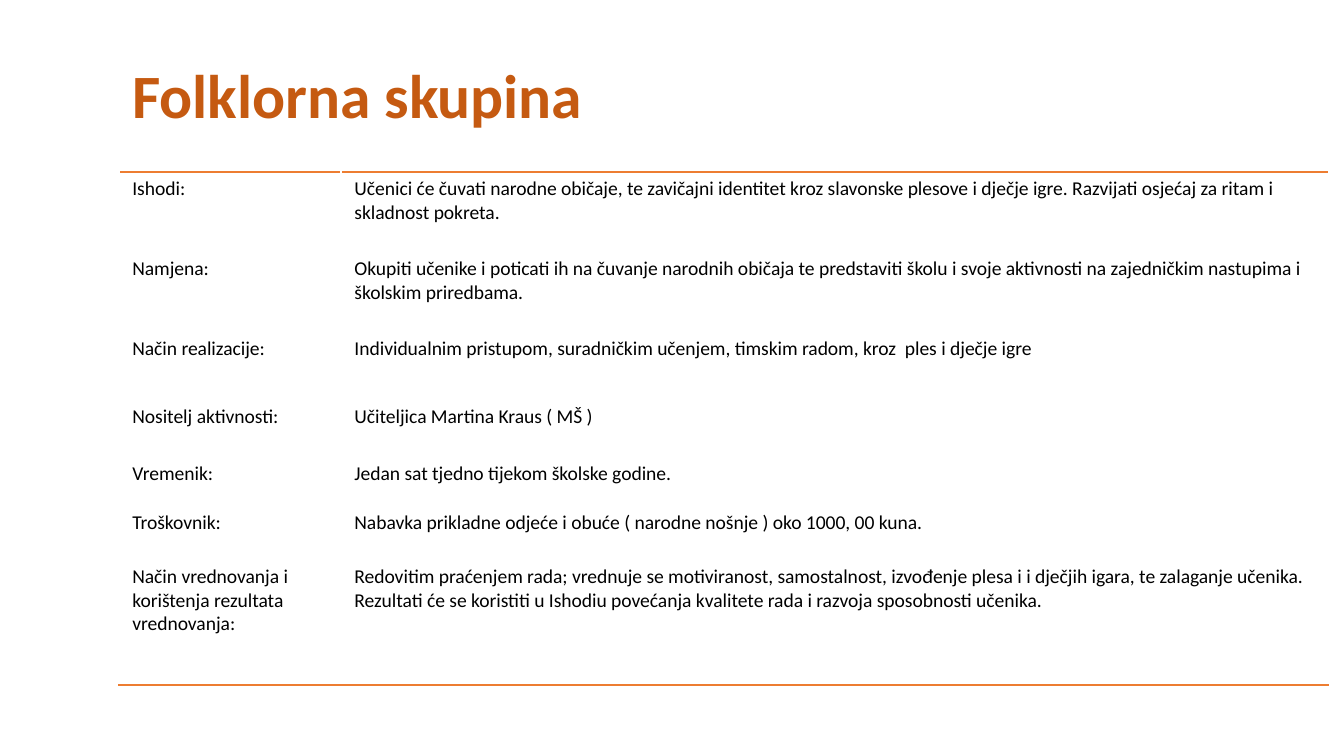
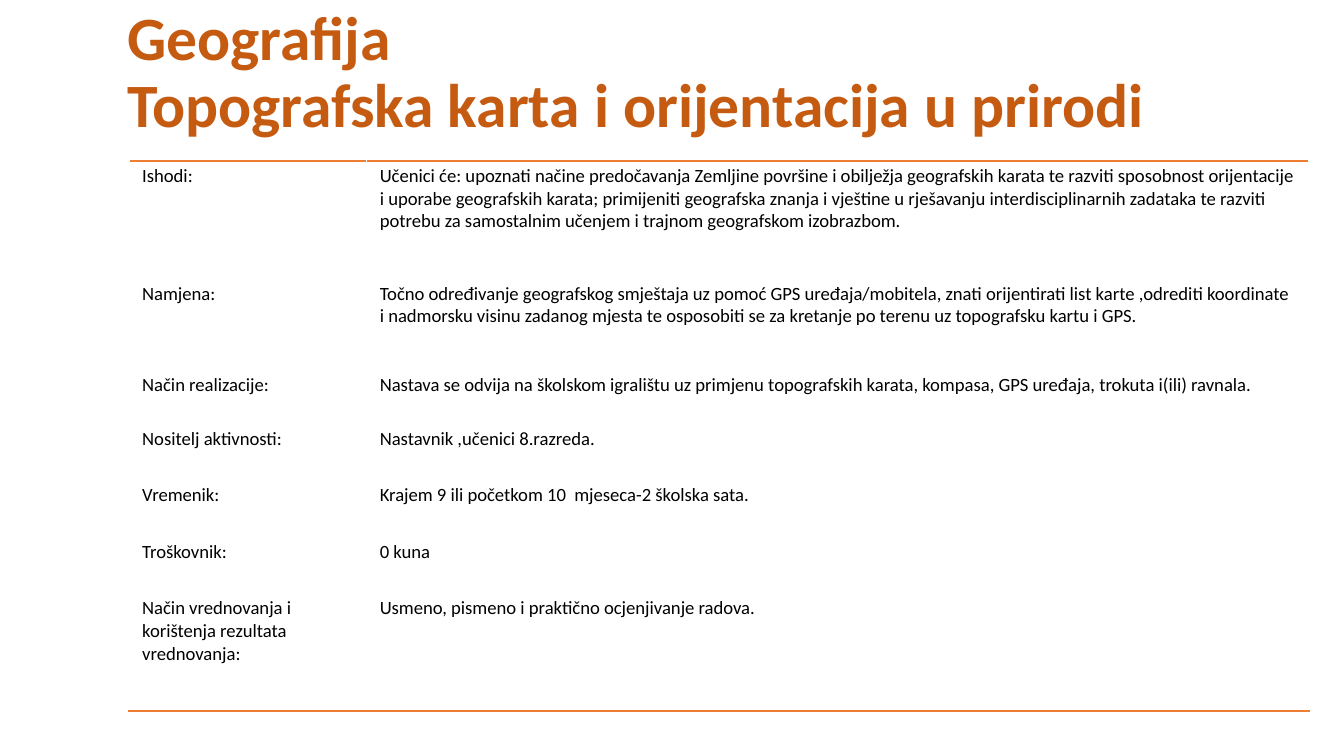
import dataclasses

import pptx
import pptx.dml.color
import pptx.enum.text
import pptx.oxml
import pptx.oxml.ns
import pptx.util

Pt = pptx.util.Pt


@dataclasses.dataclass(frozen=True)
class Theme:
    font: str = "Calibri"
    heading: str = "C55A11"
    rule: str = "ED7D31"
    body: str = "000000"
    heading_size: float = 33
    rule_width: float = 1
    inset: float = 7.2
    heading_width: float = 648
    heading_height: float = 67.7


THEME = Theme()

LABELS = [
    "Ishodi:",
    "Namjena:",
    "Način realizacije:",
    "Nositelj aktivnosti:",
    "Vremenik:",
    "Troškovnik:",
    "Način vrednovanja i korištenja rezultata vrednovanja:",
]

FOLKLORE = [
    "Učenici će čuvati narodne običaje, te zavičajni identitet kroz slavonske plesove i dječje igre. "
    "Razvijati osjećaj za ritam i skladnost pokreta.",
    "Okupiti učenike i poticati ih na čuvanje narodnih običaja te predstaviti školu i svoje aktivnosti "
    "na zajedničkim nastupima i školskim priredbama.",
    "Individualnim pristupom, suradničkim učenjem, timskim radom, kroz  ples i dječje igre",
    "Učiteljica Martina Kraus ( MŠ )",
    "Jedan sat tjedno tijekom školske godine.",
    "Nabavka prikladne odjeće i obuće ( narodne nošnje ) oko 1000, 00 kuna.",
    "Redovitim praćenjem rada; vrednuje se motiviranost, samostalnost, izvođenje plesa i i dječjih igara, "
    "te zalaganje učenika. Rezultati će se koristiti u Ishodiu povećanja kvalitete rada i razvoja "
    "sposobnosti učenika.",
]

GEOGRAPHY = [
    "Učenici će: upoznati načine predočavanja Zemljine površine i obilježja geografskih karata te razviti "
    "sposobnost orijentacije i uporabe geografskih karata; primijeniti geografska znanja i vještine u "
    "rješavanju interdisciplinarnih zadataka te razviti potrebu za samostalnim učenjem i trajnom "
    "geografskom izobrazbom.",
    "Točno određivanje geografskog smještaja uz pomoć GPS uređaja/mobitela, znati orijentirati list karte "
    ",odrediti koordinate i nadmorsku visinu zadanog mjesta te osposobiti se za kretanje po terenu uz "
    "topografsku kartu i GPS.",
    "Nastava se odvija na školskom igralištu uz primjenu topografskih karata, kompasa, GPS uređaja, "
    "trokuta i(ili) ravnala.",
    "Nastavnik ,učenici 8.razreda.",
    "Krajem 9 ili početkom 10  mjeseca-2 školska sata.",
    "0 kuna",
    "Usmeno, pismeno i praktično ocjenjivanje radova.",
]


def write(frame, text, *, size, color, bold=False, spacing=None):
    frame.word_wrap = True
    paragraph = frame.paragraphs[0]
    paragraph.text = text
    paragraph.line_spacing = spacing
    for run in paragraph.runs:
        run.font.name = THEME.font
        run.font.size = Pt(size)
        run.font.bold = bold
        run.font.color.rgb = pptx.dml.color.RGBColor.from_string(color)


def add_heading(slide, text, left, top):
    box = slide.shapes.add_textbox(
        Pt(left), Pt(top), Pt(THEME.heading_width), Pt(THEME.heading_height)
    )
    frame = box.text_frame
    frame.margin_left = frame.margin_right = Pt(THEME.inset)
    frame.margin_top = frame.margin_bottom = Pt(THEME.inset)
    frame.vertical_anchor = pptx.enum.text.MSO_ANCHOR.MIDDLE
    write(frame, text, size=THEME.heading_size, color=THEME.heading, bold=True, spacing=0.9)


def rule_cell(cell, edge):
    border = pptx.oxml.parse_xml(
        f'<a:{edge} {pptx.oxml.ns.nsdecls("a")} w="{Pt(THEME.rule_width)}">'
        f'<a:solidFill><a:srgbClr val="{THEME.rule}"/></a:solidFill></a:{edge}>'
    )
    cell._tc.get_or_add_tcPr().insert(0, border)


def add_plan(slide, answers, *, left, top, widths, heights, size, inset):
    plan = slide.shapes.add_table(
        len(LABELS), 2, Pt(left), Pt(top), Pt(sum(widths)), Pt(sum(heights))
    ).table
    plan.first_row = plan.horz_banding = False
    for column, width in zip(plan.columns, widths):
        column.width = Pt(width)
    for row, height, texts in zip(plan.rows, heights, zip(LABELS, answers)):
        row.height = Pt(height)
        for cell, text in zip(row.cells, texts):
            cell.fill.background()
            cell.margin_left = cell.margin_right = Pt(THEME.inset)
            cell.margin_top = cell.margin_bottom = Pt(inset)
            write(cell.text_frame, text, size=size, color=THEME.body)
    for column in range(2):
        rule_cell(plan.cell(0, column), "lnT")
        rule_cell(plan.cell(len(LABELS) - 1, column), "lnB")


def main():
    deck = pptx.Presentation()
    deck.slide_width, deck.slide_height = Pt(720), Pt(405)
    blank = deck.slide_layouts[6]

    folklore = deck.slides.add_slide(blank)
    add_plan(
        folklore, FOLKLORE, left=63.7, top=92, widths=[119, 529],
        heights=[43, 42.5, 36.8, 30.4, 26, 29, 67.3], size=10.5, inset=2.9,
    )
    add_heading(folklore, "Folklorna skupina", 63.7, 18.7)

    geography = deck.slides.add_slide(blank)
    add_plan(
        geography, GEOGRAPHY, left=69, top=86.2, widths=[127.3, 504.9],
        heights=[63, 48.8, 28.9, 30.3, 30.3, 30.3, 63.3], size=10, inset=2.2,
    )
    add_heading(geography, "Geografija\nTopografska karta i orijentacija u prirodi", 61.2, 5.8)

    deck.save("out.pptx")


if __name__ == "__main__":
    main()
